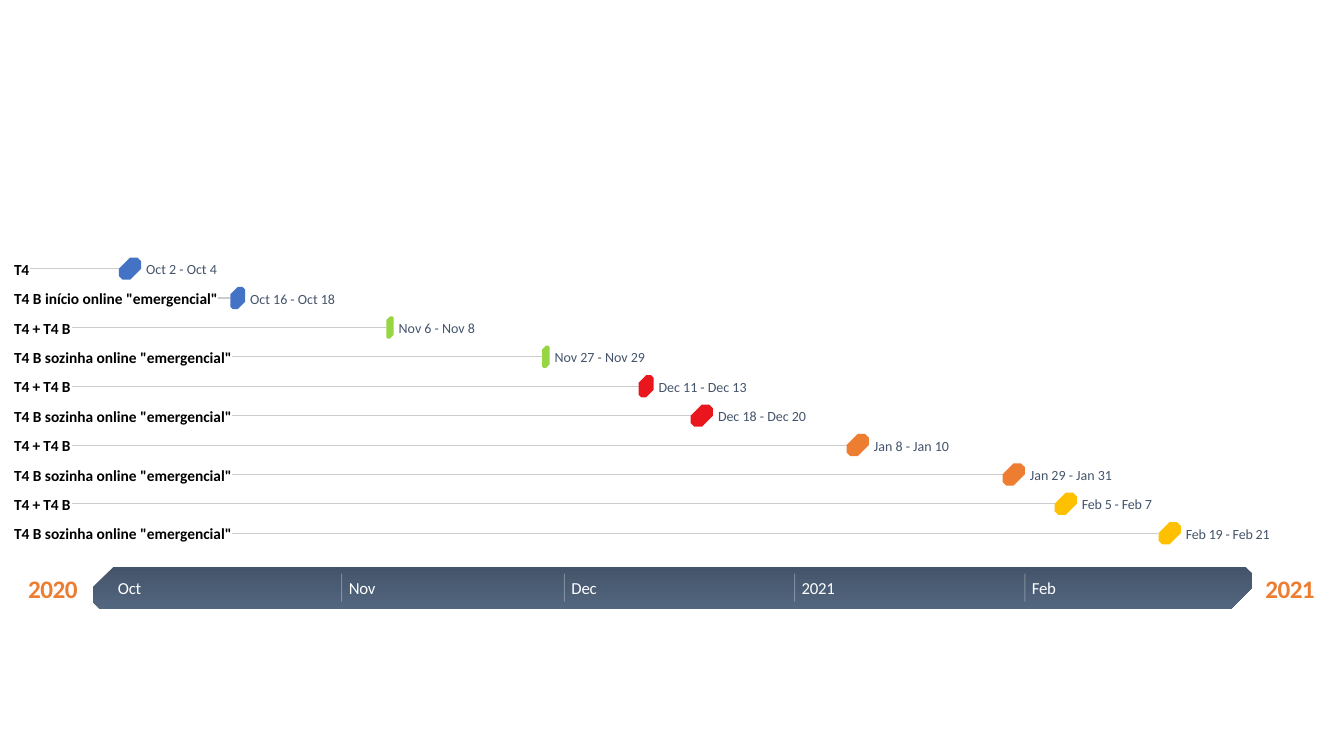
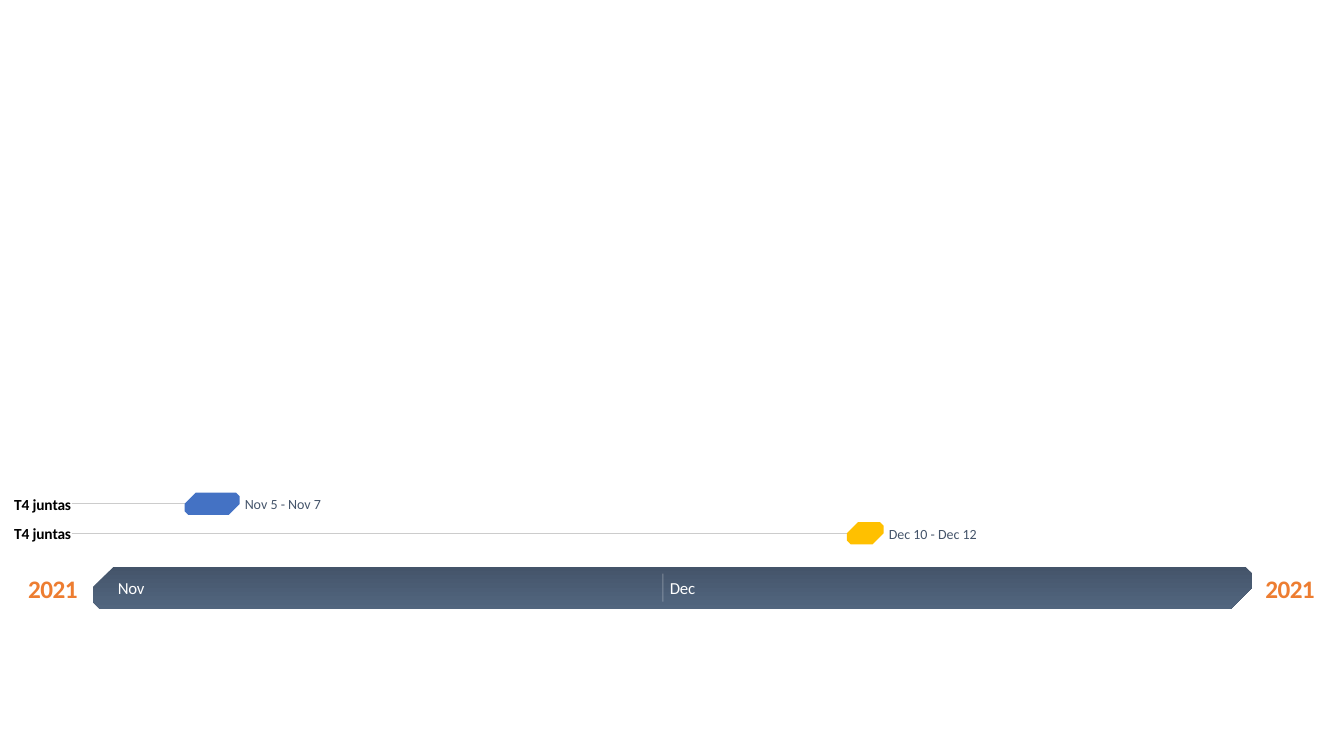
import pptx
import pptx.dml.color
import pptx.enum.shapes
import pptx.enum.text
import pptx.oxml.ns
import pptx.util
import lxml.etree

RGB = pptx.dml.color.RGBColor
PT = pptx.util.Pt
QN = pptx.oxml.ns.qn
ALIGN = pptx.enum.text.PP_ALIGN

SCALE = 9144
SLATE = RGB(0x44, 0x54, 0x6A)
STEEL = RGB(0x52, 0x66, 0x7F)
WHITE = RGB(0xFF, 0xFF, 0xFF)
BLACK = RGB(0, 0, 0)
GREY = RGB(0xCC, 0xCC, 0xCC)
BLUE = RGB(0x44, 0x72, 0xC4)
GREEN = RGB(0x96, 0xD6, 0x42)
RED = RGB(0xEA, 0x16, 0x1E)
ORANGE = RGB(0xED, 0x7D, 0x31)
GOLD = RGB(0xFF, 0xC0, 0x00)

FRAME = {
    "margin_left": 0, "margin_right": 0, "margin_top": 0, "margin_bottom": 0,
    "vertical_anchor": pptx.enum.text.MSO_ANCHOR.MIDDLE, "word_wrap": True,
}
YEAR = {"name": "Calibri", "size": PT(18), "bold": True}
MONTH = {"name": "Calibri", "size": PT(12)}
LABEL = {"name": "Calibri", "size": PT(11), "bold": True}
DATE = {"name": "Calibri", "size": PT(10)}

LAST = 529
BAR = 22
SLACK = 6

START = 'T4 B início online "emergencial"'
ALONE = 'T4 B sozinha online "emergencial"'
BOTH = "T4 + T4 B"
PAIR = "T4 juntas"
TITLES = {"T4": (17, -20), START: (203, -4), ALONE: (217, -4),
          BOTH: (58, -10), PAIR: (58, -10)}

PLANS = [
    {
        "years": ("2020", "2021"),
        "zero": 118, "span": 1031, "days": 140,
        "months": [("Oct", None), ("Nov", 30), ("Dec", 60), ("2021", 91),
                   ("Feb", 122)],
        "tasks": [
            ("T4", 0, 3, BLUE, "Oct 2 - Oct 4", 71),
            (START, 15, 2, BLUE, "Oct 16 - Oct 18", 85),
            (BOTH, 36, 1, GREEN, "Nov 6 - Nov 8", 76),
            (ALONE, 57, 1, GREEN, "Nov 27 - Nov 29", 90),
            (BOTH, 70, 2, RED, "Dec 11 - Dec 13", 89),
            (ALONE, 77, 3, RED, "Dec 18 - Dec 20", 89),
            (BOTH, 98, 3, ORANGE, "Jan 8 - Jan 10", 75),
            (ALONE, 119, 3, ORANGE, "Jan 29 - Jan 31", 82),
            (BOTH, 126, 3, GOLD, "Feb 5 - Feb 7", 72),
            (ALONE, 140, 3, GOLD, "Feb 19 - Feb 21", 86),
        ],
    },
    {
        "years": ("2021", "2021"),
        "zero": 183, "span": 657, "days": 36,
        "months": [("Nov", None), ("Dec", 26)],
        "tasks": [
            (PAIR, 0, 3, BLUE, "Nov 5 - Nov 7", 76),
            (PAIR, 36, 2, GOLD, "Dec 10 - Dec 12", 89),
        ],
    },
]


def emu(*sizes):
    """Turn px lengths into EMU."""
    return [pptx.util.Emu(round(size * SCALE)) for size in sizes]


def apply(thing, values):
    """Set each named attribute on an object."""
    for name, value in values.items():
        setattr(thing, name, value)


def write(slide, box, text, style, ink, track=0, align=ALIGN.LEFT):
    """Add one line of text in a box without margins."""
    frame = slide.shapes.add_textbox(*emu(*box)).text_frame
    apply(frame, FRAME)
    para = frame.paragraphs[0]
    para.alignment = align
    run = para.add_run()
    run.text = text
    apply(run.font, style)
    run.font.color.rgb = ink
    if track:
        run._r.get_or_add_rPr().set("spc", str(track))


def rule(slide, ends, ink, alpha=None):
    """Add a thin straight line, see-through if alpha is given."""
    kind = pptx.enum.shapes.MSO_CONNECTOR.STRAIGHT
    line = slide.shapes.add_connector(kind, *emu(*ends))
    line.line.width = PT(0.75)
    line.line.color.rgb = ink
    node = line.element.spPr
    if alpha:
        tint = next(node.iter(QN("a:srgbClr")))
        lxml.etree.SubElement(tint, QN("a:alpha")).set("val", str(alpha * 1000))
    lxml.etree.SubElement(node, QN("a:effectLst"))


def snip(slide, box, *inks):
    """Add a snipped bar in one colour or a vertical blend of two."""
    kind = pptx.enum.shapes.MSO_SHAPE.SNIP_2_DIAG_RECTANGLE
    shape = slide.shapes.add_shape(kind, *emu(*box))
    shape.shadow.inherit = False
    shape.line.fill.background()
    for index, value in enumerate((1, 0.167)):
        shape.adjustments[index] = value
    if len(inks) == 1:
        shape.fill.solid()
        shape.fill.fore_color.rgb = inks[0]
        return
    shape.fill.gradient()
    shape.fill.gradient_angle = 270
    for index, stop in enumerate(shape.fill.gradient_stops):
        stop.color.rgb = inks[index]
        stop.position = index


def band(slide, plan, place):
    """Draw the time band with its years and months."""
    for left, year in zip((28, 1255), plan["years"]):
        write(slide, (left - 3, 568, 55, 31), year, YEAR, ORANGE, -40,
              ALIGN.CENTER)
    snip(slide, (92, 562, 1150, 42), SLATE, STEEL)
    for name, day in plan["months"]:
        tick = 110 if day is None else place(day)
        write(slide, (tick + 7, 573, 40, 20), name, MONTH, WHITE, -20)
        if day is not None:
            rule(slide, (tick, 569, tick, 597), WHITE, 30)


def task(slide, row, mid, place):
    """Draw one task: label, leader, bar and dates."""
    title, day, count, ink, dates, width = row
    size, track = TITLES[title]
    left, right = place(day), place(day + count)
    rule(slide, (13 + size, mid, left, mid), GREY)
    snip(slide, (left, mid - BAR / 2, right - left, BAR), ink)
    write(slide, (right + 5, mid - 8, width + SLACK, 17), dates, DATE, SLATE,
          -10 if dates.startswith("Feb") else 0)
    write(slide, (14, mid - 9, size + SLACK, 19), title, LABEL, BLACK, track)


def draw(slide, plan):
    """Draw one timeline slide, its tasks stacked up from the band."""
    def place(day):
        """Give the px position of a day."""
        return plan["zero"] + day * plan["span"] / plan["days"]

    band(slide, plan, place)
    for index, row in enumerate(reversed(plan["tasks"])):
        task(slide, row, LAST - index * 175 / 6, place)


def main():
    """Build and save the deck."""
    deck = pptx.Presentation()
    deck.slide_width, deck.slide_height = emu(1333, 750)
    for plan in PLANS:
        draw(deck.slides.add_slide(deck.slide_layouts[6]), plan)
    deck.save("out.pptx")


if __name__ == "__main__":
    main()
